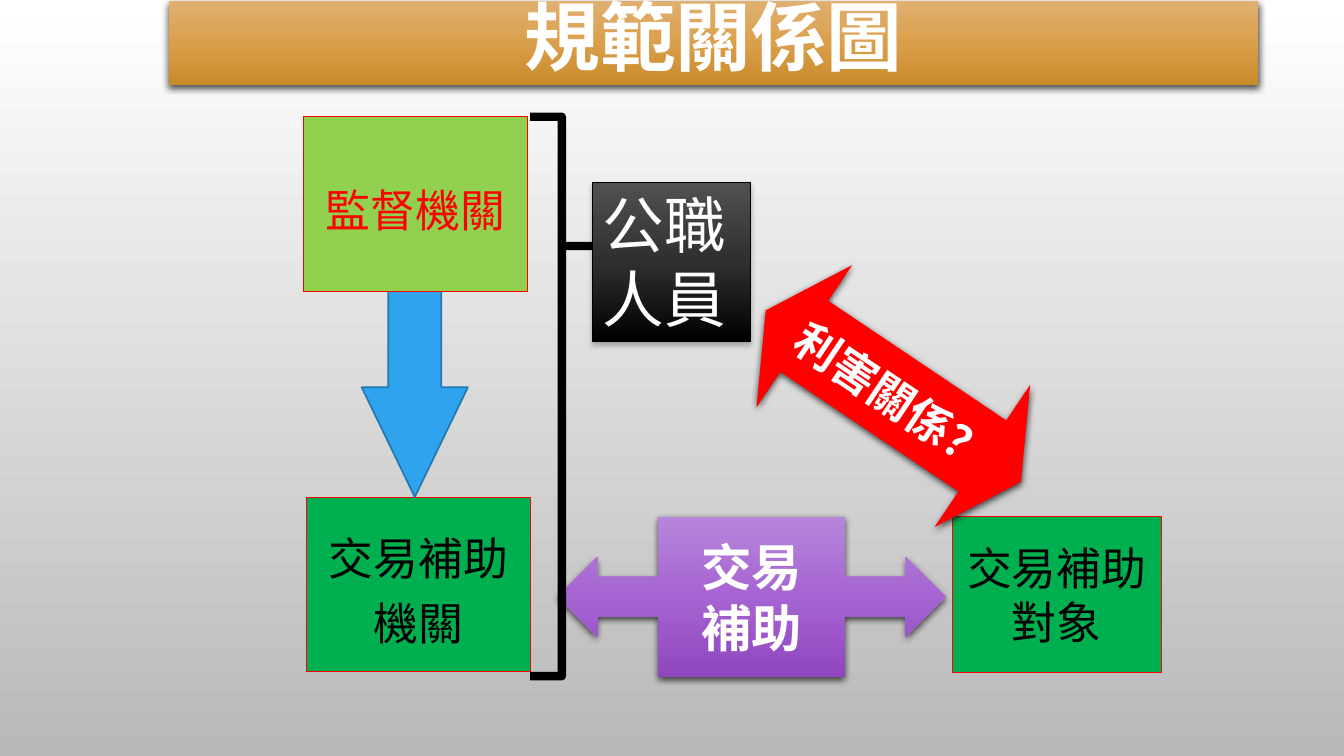
from pptx import Presentation
from pptx.dml.color import RGBColor
from pptx.enum.shapes import MSO_SHAPE
from pptx.enum.text import MSO_ANCHOR, PP_ALIGN
from pptx.oxml.ns import qn
from pptx.util import Pt
from lxml import etree

RECTANGLE = MSO_SHAPE.RECTANGLE
BRACE = MSO_SHAPE.RIGHT_BRACE
DOWN_ARROW = MSO_SHAPE.DOWN_ARROW
TWO_WAY_ARROW = MSO_SHAPE.LEFT_RIGHT_ARROW
TWO_WAY_CALLOUT = MSO_SHAPE.LEFT_RIGHT_ARROW_CALLOUT
TOP, MIDDLE, BOTTOM = MSO_ANCHOR.TOP, MSO_ANCHOR.MIDDLE, MSO_ANCHOR.BOTTOM
LEFT, CENTER = PP_ALIGN.LEFT, PP_ALIGN.CENTER

WHITE = RGBColor(0xFF, 0xFF, 0xFF)
BLACK = RGBColor(0x00, 0x00, 0x00)
RED = RGBColor(0xFF, 0x00, 0x00)
LIME = RGBColor(0x92, 0xD0, 0x50)
GREEN = RGBColor(0x00, 0xB0, 0x50)
BLUE = RGBColor(0x2F, 0xA3, 0xEE)
DARK_BLUE = RGBColor(0x23, 0x79, 0xB0)
GREY = RGBColor(0xB9, 0xB9, 0xB9)
GOLDS = (RGBColor(0xE0, 0xB0, 0x71), RGBColor(0xDA, 0x9F, 0x4B),
         RGBColor(0xC9, 0x8A, 0x29))
PURPLES = (RGBColor(0xB6, 0x85, 0xDA), RGBColor(0xA6, 0x64, 0xD2),
           RGBColor(0x8F, 0x47, 0xBF))
CHARCOALS = (RGBColor(0x51, 0x51, 0x51), RGBColor(0x2F, 0x2F, 0x2F), BLACK)

# Shadow strength: opacity in percent, blur in points
STRONG, SOFT = (69, 5), (28, 4)


def add_color(parent, color):
    return etree.SubElement(parent, qn("a:srgbClr"), val=str(color))


def fill_gradient(fill, element, colors):
    """Fill from top to bottom with evenly spaced colours."""
    fill.gradient()
    fill.gradient_angle = 270
    stops = element.find(".//" + qn("a:gsLst"))
    for stop in list(stops):
        stops.remove(stop)
    for index, color in enumerate(colors):
        position = 100000 * index // (len(colors) - 1)
        add_color(etree.SubElement(stops, qn("a:gs"), pos=str(position)), color)


def add_shadow(shape, opacity, blur):
    effects = shape._element.spPr.find(qn("a:effectLst"))
    shadow = etree.SubElement(
        effects, qn("a:outerShdw"), blurRad=str(Pt(blur)), dist=str(Pt(2)),
        dir="5400000", algn="ctr", rotWithShape="0")
    etree.SubElement(add_color(shadow, BLACK), qn("a:alpha"),
                     val=str(opacity * 1000))


def add_figure(page, kind, left, top, width, height, fill=None, line=None,
               weight=0.75, shadow=None, adjustments=(), rotation=0):
    """Add a shape; fill is one colour, a tuple for a gradient, or None."""
    shape = page.shapes.add_shape(kind, Pt(left), Pt(top), Pt(width), Pt(height))
    shape.rotation = rotation
    for index, value in enumerate(adjustments):
        shape.adjustments[index] = value
    if fill is None:
        shape.fill.background()
    elif isinstance(fill, RGBColor):
        shape.fill.solid()
        shape.fill.fore_color.rgb = fill
    else:
        fill_gradient(shape.fill, shape._element, fill)
    if line is None:
        shape.line.fill.background()
    else:
        shape.line.color.rgb = line
        shape.line.width = Pt(weight)
    shape.shadow.inherit = False
    if shadow:
        add_shadow(shape, *shadow)
    return shape


def write(shape, text, size=32, color=WHITE, font="Cabin", bold=False,
          align=CENTER, anchor=MIDDLE, spacing=1.0):
    """Write each line of text as one paragraph."""
    frame = shape.text_frame
    frame.word_wrap = True
    frame.vertical_anchor = anchor
    for index, line in enumerate(text.split("\n")):
        para = frame.add_paragraph() if index else frame.paragraphs[0]
        para.alignment = align
        para.line_spacing = spacing
        span = para.add_run()
        span.text = line
        span.font.name = font
        span.font.size = Pt(size)
        span.font.bold = bold
        span.font.color.rgb = color


def main():
    deck = Presentation()
    deck.slide_width, deck.slide_height = Pt(960), Pt(540)
    page = deck.slides.add_slide(deck.slide_layouts[6])
    fill_gradient(page.background.fill, page._element, (WHITE, GREY))

    # Dealings between agency and counterparty
    dealings = add_figure(page, TWO_WAY_CALLOUT, 398.2, 369.4, 277.2, 113.8,
                          fill=PURPLES, shadow=STRONG)
    write(dealings, "交易\n補助", size=36, bold=True)
    counterparty = add_figure(page, RECTANGLE, 680.4, 369.2, 149, 111.4,
                              fill=GREEN, line=RED)
    write(counterparty, "交易補助對象", color=BLACK)
    agency = add_figure(page, RECTANGLE, 218.9, 355.2, 160, 124.6,
                        fill=GREEN, line=RED)
    write(agency, "交易補助機關", color=BLACK, spacing=1.2)

    # Public officials of both agencies
    add_figure(page, BRACE, 378.7, 83.4, 45.2, 399.6, line=BLACK, weight=6,
               adjustments=(0, 0.231))
    officials = add_figure(page, RECTANGLE, 423.2, 130.3, 112.8, 113.8,
                           fill=CHARCOALS, line=BLACK, shadow=SOFT)
    write(officials, "公職人員", size=44, align=LEFT, anchor=TOP)

    # Conflict of interest
    interest = add_figure(page, TWO_WAY_ARROW, 528.3, 221.8, 219.6, 122.4,
                          fill=RED, shadow=STRONG, adjustments=(0.5, 0.271),
                          rotation=33.9)
    write(interest, "利害關係？", font="Arial", bold=True)

    # Supervision
    add_figure(page, DOWN_ARROW, 258.4, 175, 75.8, 180, fill=BLUE,
               line=DARK_BLUE, weight=1.25, adjustments=(0.5, 1.033))
    supervisor = add_figure(page, RECTANGLE, 216.7, 83.4, 160, 124.6,
                            fill=LIME, line=RED)
    write(supervisor, "監督機關", color=RED, spacing=1.2)

    # Title
    title = add_figure(page, RECTANGLE, 120.5, 0.7, 778.3, 60,
                       fill=GOLDS, shadow=STRONG)
    write(title, "規範關係圖", size=54, bold=True, anchor=BOTTOM, spacing=0.8)

    deck.save("out.pptx")


if __name__ == "__main__":
    main()
